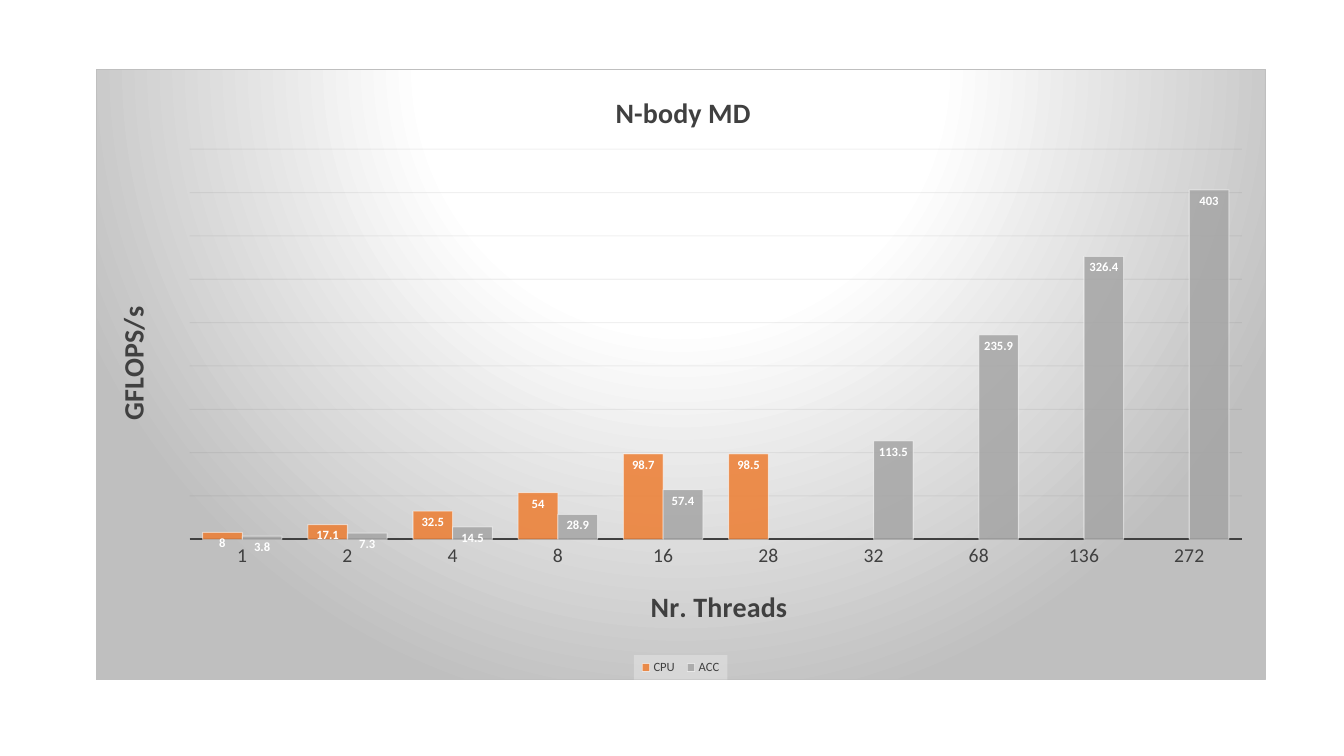
from pptx import Presentation
from pptx.chart.data import CategoryChartData
from pptx.dml.color import RGBColor
from pptx.enum.chart import (XL_CHART_TYPE, XL_LABEL_POSITION,
                             XL_LEGEND_POSITION, XL_TICK_MARK)
from pptx.oxml import parse_xml
from pptx.oxml.ns import nsdecls, qn
from pptx.util import Cm, Pt

COLUMNS = XL_CHART_TYPE.COLUMN_CLUSTERED
INSIDE = XL_LABEL_POSITION.INSIDE_END
BOTTOM = XL_LEGEND_POSITION.BOTTOM
NO_TICK = XL_TICK_MARK.NONE

TITLE = "N-body MD"
X_TITLE = "Nr. Threads"
Y_TITLE = "GFLOPS/s"
THREADS = ["1", "2", "4", "8", "16", "28", "32", "68", "136", "272"]
SPEEDS = {
    "CPU": [8, 17.1, 32.5, 54, 98.7, 98.5, None, None, None, None],
    "ACC": [3.8, 7.3, 14.5, 28.9, 57.4, None, 113.5, 235.9, 326.4, 403],
}
THEME = {
    "font": "Calibri",
    "text": "404040", "label": "FFFFFF", "edge": "FFFFFF", "grid": "0D0D0D",
    "glow": "FFFFFF", "rim": "BFBFBF", "key": "F2F2F2",
    "CPU": "ED7D31", "ACC": "A5A5A5",
    "title_size": 20, "axis_size": 14, "small_size": 9, "base_size": 10,
}
# Fractions of the chart: left, top and, where sized, width, height
PLACES = {
    "title": (0.44, 0.03),
    "x_title": (0.47, 0.84),
    "y_title": (0.01, 0.38),
    "plot": (0.08, 0.13, 0.9, 0.64),
    "legend": (0.46, 0.96, 0.08, 0.04),
}


def style(font, size, color, bold=False):
    font.name = THEME["font"]
    font.size = Pt(size)
    font.bold = bold
    font.color.rgb = RGBColor.from_string(THEME[color])


def stroke(line, color, width):
    line.color.rgb = RGBColor.from_string(THEME[color])
    line.width = Pt(width)


def veil(node, *shares):
    """Set the opacity, in percent, of each colour under node in turn."""
    for color, share in zip(node.iter(qn("a:srgbClr")), shares):
        color.append(parse_xml(
            f'<a:alpha {nsdecls("a")} val="{share * 1000}"/>'))


def place(node, index, spot):
    """Give a chart part a fixed place."""
    old = node.find(qn("c:layout"))
    if old is not None:
        node.remove(old)
    inner = '<c:layoutTarget val="inner"/>' if index == 0 else ""
    modes = '<c:xMode val="edge"/><c:yMode val="edge"/>'
    sizes = "".join(f'<c:{key} val="{part}"/>' for key, part in zip("xywh", spot))
    node.insert(index, parse_xml(
        f'<c:layout {nsdecls("c")}><c:manualLayout>{inner}{modes}{sizes}'
        '</c:manualLayout></c:layout>'))


def entitle(owner, text):
    frame = owner.text_frame
    frame.text = text
    style(frame.paragraphs[0].runs[0].font, THEME["title_size"], "text", True)


def backdrop(root):
    stops = "".join(
        f'<a:gs pos="{at * 1000}"><a:srgbClr val="{THEME[color]}"/></a:gs>'
        for at, color in ((0, "glow"), (39, "glow"), (100, "rim")))
    root.find(qn("c:chart")).addnext(parse_xml(
        f'<c:spPr {nsdecls("c", "a")}><a:gradFill><a:gsLst>{stops}</a:gsLst>'
        '<a:path path="circle"><a:fillToRect l="50000" t="-80000" r="50000" '
        'b="180000"/></a:path></a:gradFill><a:ln w="9525"><a:solidFill>'
        f'<a:srgbClr val="{THEME["rim"]}"/></a:solidFill></a:ln></c:spPr>'))


def set_axes(chart):
    across = chart.category_axis
    across.major_tick_mark = across.minor_tick_mark = NO_TICK
    style(across.tick_labels.font, THEME["axis_size"], "text")
    stroke(across.format.line, "text", 1.5)
    entitle(across.axis_title, X_TITLE)
    upright = chart.value_axis
    upright.minimum_scale, upright.maximum_scale = 0, 450
    upright.major_unit = 50
    upright.visible = False
    stroke(upright.major_gridlines.format.line, "grid", 0.75)
    entitle(upright.axis_title, Y_TITLE)
    veil(next(chart.element.iter(qn("c:majorGridlines"))), 5)


def set_bars(chart):
    plot = chart.plots[0]
    plot.gap_width = 65
    plot.overlap = 0
    plot.vary_by_categories = False
    for bars, node in zip(plot.series, chart.element.iter(qn("c:ser"))):
        bars.format.fill.solid()
        bars.format.fill.fore_color.rgb = RGBColor.from_string(THEME[bars.name])
        stroke(bars.format.line, "edge", 0.75)
        veil(node.find(qn("c:spPr")), 85, 50)
        labels = bars.data_labels
        labels.show_value = True
        labels.position = INSIDE
        style(labels.font, THEME["small_size"], "label", True)


def set_legend(chart):
    chart.has_legend = True
    chart.legend.position = BOTTOM
    chart.legend.include_in_layout = False
    style(chart.legend.font, THEME["small_size"], "text")
    legend = next(chart.element.iter(qn("c:legend")))
    back = parse_xml(
        f'<c:spPr {nsdecls("c", "a")}><a:solidFill>'
        f'<a:srgbClr val="{THEME["key"]}"/></a:solidFill></c:spPr>')
    veil(back, 39)
    legend.find(qn("c:txPr")).addprevious(back)
    place(legend, 1, PLACES["legend"])


def main():
    deck = Presentation()
    deck.slide_width, deck.slide_height = Cm(33.87), Cm(19.05)
    slide = deck.slides.add_slide(deck.slide_layouts[6])

    data = CategoryChartData()
    data.categories = THREADS
    for name, speeds in SPEEDS.items():
        data.add_series(name, speeds)
    chart = slide.shapes.add_chart(
        COLUMNS, Cm(2.41), Cm(1.75), Cm(29.49), Cm(15.39), data).chart
    chart.font.name = THEME["font"]
    chart.font.size = Pt(THEME["base_size"])
    chart.has_title = True
    entitle(chart.chart_title, TITLE)
    set_axes(chart)
    set_bars(chart)
    set_legend(chart)
    backdrop(chart.element)

    titles = chart.element.iter(qn("c:title"))
    for title, name in zip(list(titles), ("title", "x_title", "y_title")):
        place(title, 1, PLACES[name])
    place(next(chart.element.iter(qn("c:plotArea"))), 0, PLACES["plot"])
    deck.save("out.pptx")


if __name__ == "__main__":
    main()
